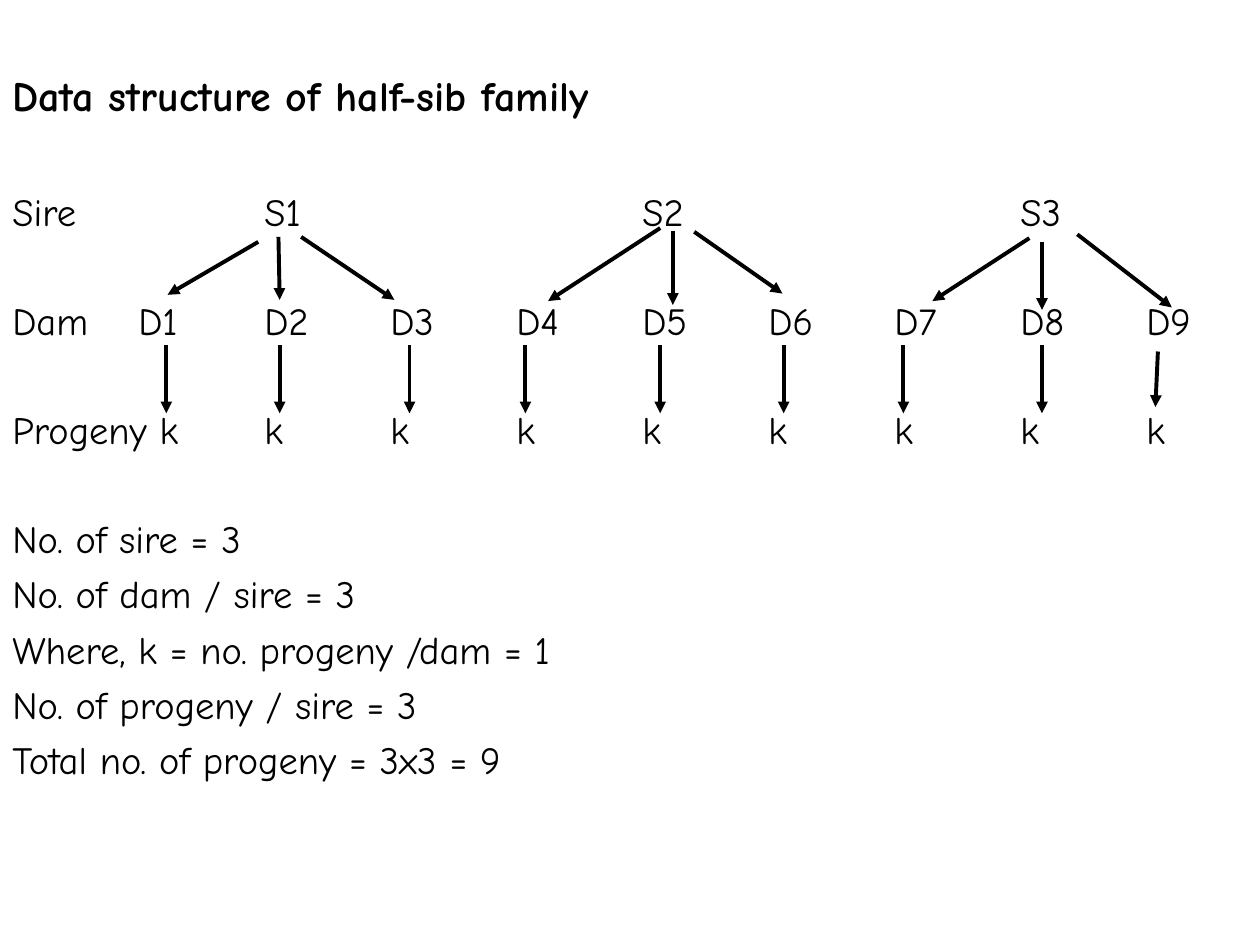
import lxml.etree
import pptx
import pptx.dml.color
import pptx.enum.shapes
import pptx.oxml.ns
import pptx.util

Inches = pptx.util.Inches
Pt = pptx.util.Pt
qn = pptx.oxml.ns.qn

BLACK = pptx.dml.color.RGBColor(0, 0, 0)
FONT_NAME = "Comic Neue"
TAB_COUNT = 9
ROW_GAP = 36
LIST_GAP = 5.1

TITLE_FORMAT = {"name": FONT_NAME, "size": Pt(24), "bold": True}
BODY_FORMAT = {"name": FONT_NAME, "size": Pt(22), "bold": False}

DAMS = [f"D{number}" for number in range(1, 10)]
LINES = [
    ("Data structure of half-sib family", 0, TITLE_FORMAT),
    ("Sire\t\tS1\t\t\tS2\t\t\tS3", 39, BODY_FORMAT),
    ("\t".join(["Dam"] + DAMS), ROW_GAP, BODY_FORMAT),
    ("Progeny " + "\t".join("k" for dam in DAMS), ROW_GAP, BODY_FORMAT),
    ("No. of sire = 3", ROW_GAP, BODY_FORMAT),
    ("No. of dam / sire = 3", LIST_GAP, BODY_FORMAT),
    ("Where, k = no. progeny /dam = 1", LIST_GAP, BODY_FORMAT),
    ("No. of progeny / sire = 3", LIST_GAP, BODY_FORMAT),
    ("Total no. of progeny = 3x3 = 9", LIST_GAP, BODY_FORMAT),
]

SIRE_TO_DAM = [
    (2.05, 1.92, 1.33, 2.34),
    (2.21, 1.88, 2.22, 2.38),
    (2.39, 1.88, 3.13, 2.38),
    (5.24, 1.81, 4.35, 2.39),
    (5.34, 1.83, 5.34, 2.42),
    (5.51, 1.84, 6.21, 2.33),
    (8.17, 1.89, 7.4, 2.39),
    (8.27, 1.92, 8.27, 2.46),
    (8.55, 1.86, 9.3, 2.44),
]
PROGENY_X = [1.32, 2.22, 3.25, 4.17, 5.24, 6.22, 7.17, 8.27]
DAM_TO_PROGENY = [(x, 2.74, x, 3.28) for x in PROGENY_X]
DAM_TO_PROGENY.append((9.19, 2.79, 9.17, 3.23))


def add_tab_stops(paragraph):
    tab_list = lxml.etree.SubElement(paragraph._p.get_or_add_pPr(), qn("a:tabLst"))
    for column in range(1, TAB_COUNT + 1):
        lxml.etree.SubElement(tab_list, qn("a:tab"), pos=str(Inches(column)), algn="l")


def write_line(paragraph, wording, gap, font_format):
    paragraph.space_before = Pt(gap)
    if "\t" in wording:
        add_tab_stops(paragraph)
    run = paragraph.add_run()
    run.text = wording
    for attribute, value in font_format.items():
        setattr(run.font, attribute, value)
    run.font.color.rgb = BLACK


def add_body(slide):
    body = slide.shapes.add_textbox(
        Inches(0), Inches(0.5), Inches(9.67), Inches(6.03)
    ).text_frame
    body.word_wrap = True
    for index, (wording, gap, font_format) in enumerate(LINES):
        paragraph = body.add_paragraph() if index else body.paragraphs[0]
        write_line(paragraph, wording, gap, font_format)


def add_arrow(slide, ends):
    arrow = slide.shapes.add_connector(
        pptx.enum.shapes.MSO_CONNECTOR.STRAIGHT, *(Inches(end) for end in ends)
    )
    arrow.line.color.rgb = BLACK
    arrow.line.width = Pt(2.25)
    lxml.etree.SubElement(arrow.line._get_or_add_ln(), qn("a:tailEnd"), type="triangle")
    lxml.etree.SubElement(arrow._element.spPr, qn("a:effectLst"))


def main():
    presentation = pptx.Presentation()
    presentation.slide_width = Inches(10)
    presentation.slide_height = Inches(7.5)
    slide = presentation.slides.add_slide(presentation.slide_layouts[6])
    add_body(slide)
    for ends in SIRE_TO_DAM + DAM_TO_PROGENY:
        add_arrow(slide, ends)
    presentation.save("out.pptx")


if __name__ == "__main__":
    main()
